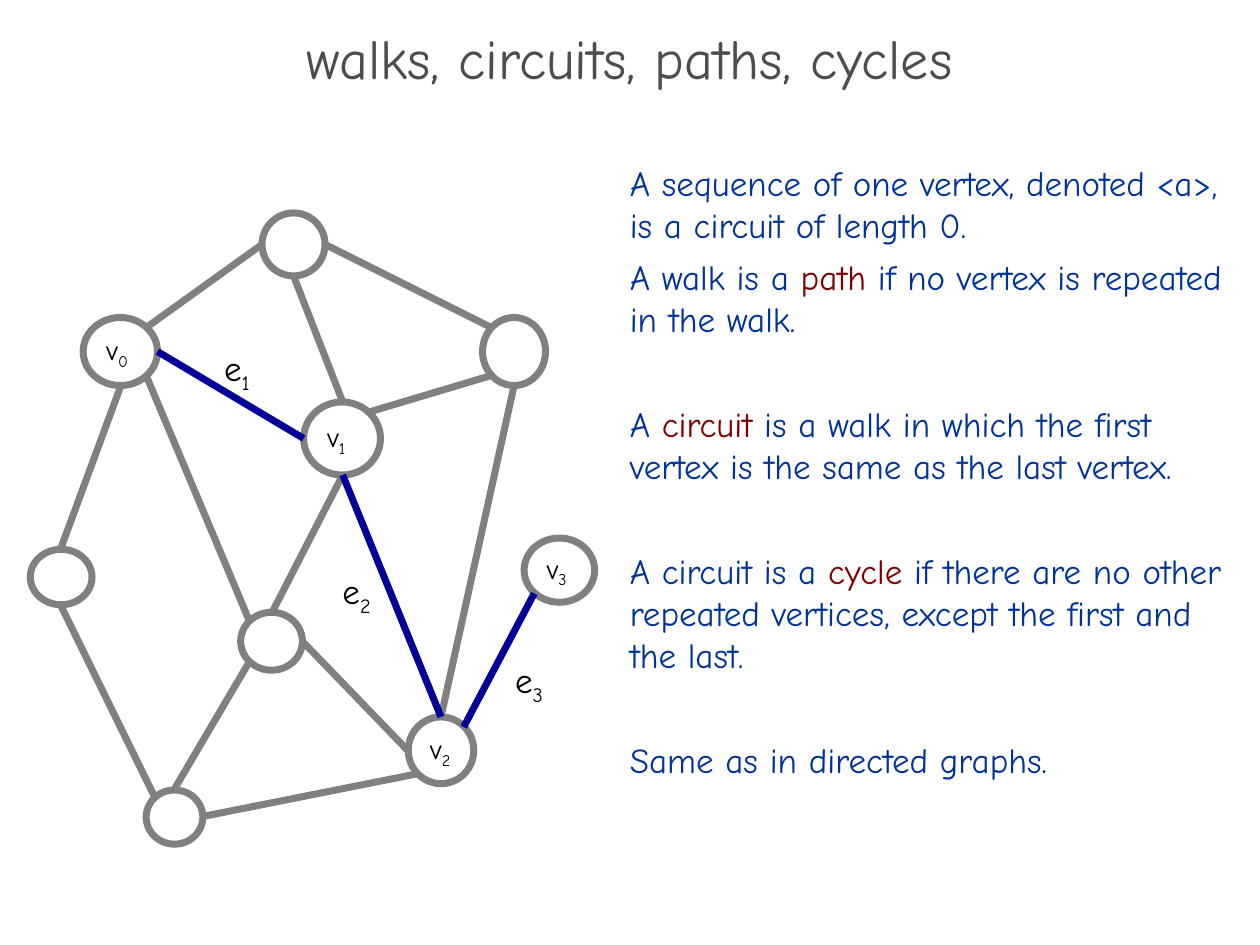
from math import cos, radians, sin
from lxml.etree import SubElement
from pptx import Presentation
from pptx.dml.color import RGBColor
from pptx.enum.shapes import MSO_CONNECTOR, MSO_SHAPE
from pptx.enum.text import MSO_ANCHOR, MSO_AUTO_SIZE, PP_ALIGN
from pptx.oxml.ns import qn
from pptx.util import Emu, Pt

SCALE = 9144  # EMU per px, 100 px to the inch
SIDES = ["e", "se", "s", "sw", "w", "nw", "n", "ne"]


def px(*vals):
    return [Emu(val * SCALE) for val in vals]


def tint(code):
    return RGBColor.from_string(code)


class Board:
    font = "Comic Neue"
    ink, gray, navy = "000000", "808080", "000099"
    head, blue, red = "4D4D4D", "003399", "800000"
    width = Pt(4)

    def __init__(self, slide):
        self.slide = slide
        self.nodes = {}

    def run(self, para, text, size, color, sub=False):
        run = para.add_run()
        run.text = text
        run.font.name = self.font
        run.font.size = Pt(size)
        run.font.color.rgb = tint(color)
        if sub:
            run.font._element.set("baseline", "-25000")

    def name(self, frame, sign, size):
        """Write a letter with its index, such as v0."""
        frame.word_wrap = False
        para = frame.paragraphs[0]
        para.alignment = PP_ALIGN.LEFT
        self.run(para, sign[0], size, self.ink)
        self.run(para, sign[1:], size, self.ink, sub=True)

    def box(self, *area):
        return self.slide.shapes.add_textbox(*px(*area)).text_frame

    def title(self, text, *area):
        frame = self.box(*area)
        frame.word_wrap = True
        frame.vertical_anchor = MSO_ANCHOR.MIDDLE
        para = frame.paragraphs[0]
        para.alignment = PP_ALIGN.CENTER
        para.line_spacing = 0.7
        self.run(para, text, 32, self.head)

    def body(self, items, *area):
        """Each item is a gap after it and its parts; odd parts are terms."""
        frame = self.box(*area)
        frame.word_wrap = True
        for i, (gap, *parts) in enumerate(items):
            para = frame.add_paragraph() if i else frame.paragraphs[0]
            para.space_after = Pt(gap)
            for j, part in enumerate(parts):
                self.run(para, part, 20, self.red if j % 2 else self.blue)

    def node(self, key, *area):
        self.nodes[key] = area
        oval = self.slide.shapes.add_shape(MSO_SHAPE.OVAL, *px(*area))
        oval.shadow.inherit = False
        oval.fill.solid()
        oval.fill.fore_color.rgb = tint("FFFFFF")
        oval.line.color.rgb = tint(self.gray)
        oval.line.width = self.width
        if key[0] == "v":
            oval.text_frame.vertical_anchor = MSO_ANCHOR.MIDDLE
            self.name(oval.text_frame, key, 16)

    def rim(self, key, side):
        """Point on a node's rim in a compass direction."""
        x, y, w, h = self.nodes[key]
        turn = radians(45 * SIDES.index(side))
        return (round(x + w / 2 * (1 + cos(turn))),
                round(y + h / 2 * (1 + sin(turn))))

    def edge(self, start, out, end, into, color=gray):
        ends = px(*self.rim(start, out), *self.rim(end, into))
        line = self.slide.shapes.add_connector(MSO_CONNECTOR.STRAIGHT, *ends)
        line.line.color.rgb = tint(color)
        line.line.width = self.width
        SubElement(line._element.spPr, qn("a:effectLst"))

    def label(self, sign, x, y):
        frame = self.box(x, y, 46, 44)
        frame.auto_size = MSO_AUTO_SIZE.SHAPE_TO_FIT_TEXT
        self.name(frame, sign, 20)


def main():
    deck = Presentation()
    deck.slide_width, deck.slide_height = px(1000, 750)
    board = Board(deck.slides.add_slide(deck.slide_layouts[6]))

    # Title and definitions
    board.title("walks, circuits, paths, cycles", 0, 27, 1000, 50)
    near, far = 6, 36
    board.body([
        (near, "A sequence of one vertex, denoted <a>, "
               "is a circuit of length 0."),
        (far, "A walk is a ", "path",
         " if no vertex is repeated in the walk."),
        (far, "A ", "circuit", " is a walk in which the first vertex "
                               "is the same as the last vertex."),
        (far, "A circuit is a ", "cycle",
         " if there are no other repeated vertices, "
         "except the first and the last."),
        (near, "Same as in directed graphs."),
    ], 490, 123, 510, 527)

    # Vertices
    for item in [
        ("top", 208, 169, 50, 50),
        ("v0", 66, 252, 59, 54),
        ("v3", 416, 427, 56, 51),
        ("v1", 241, 319, 61, 58),
        ("mid", 191, 486, 49, 46),
        ("left", 24, 436, 49, 44),
        ("right", 383, 252, 50, 54),
        ("low", 116, 627, 45, 43),
        ("v2", 324, 569, 52, 53),
    ]:
        board.node(*item)

    # Edges, with the walk in navy
    for item in [
        ("top", "w", "v0", "ne"),
        ("v0", "s", "left", "n"),
        ("left", "s", "low", "nw"),
        ("low", "e", "v2", "sw"),
        ("top", "e", "right", "nw"),
        ("top", "s", "v1", "n"),
        ("v0", "e", "v1", "w", board.navy),
        ("v0", "se", "mid", "nw"),
        ("v1", "s", "mid", "n"),
        ("mid", "sw", "low", "n"),
        ("right", "sw", "v1", "ne"),
        ("v3", "sw", "v2", "ne", board.navy),
        ("mid", "e", "v2", "w"),
        ("right", "s", "v2", "n"),
        ("v1", "s", "v2", "n", board.navy),
    ]:
        board.edge(*item)

    # Edge labels
    for item in [("e1", 168, 270), ("e2", 262, 447), ("e3", 399, 518)]:
        board.label(*item)

    deck.save("out.pptx")


if __name__ == "__main__":
    main()
